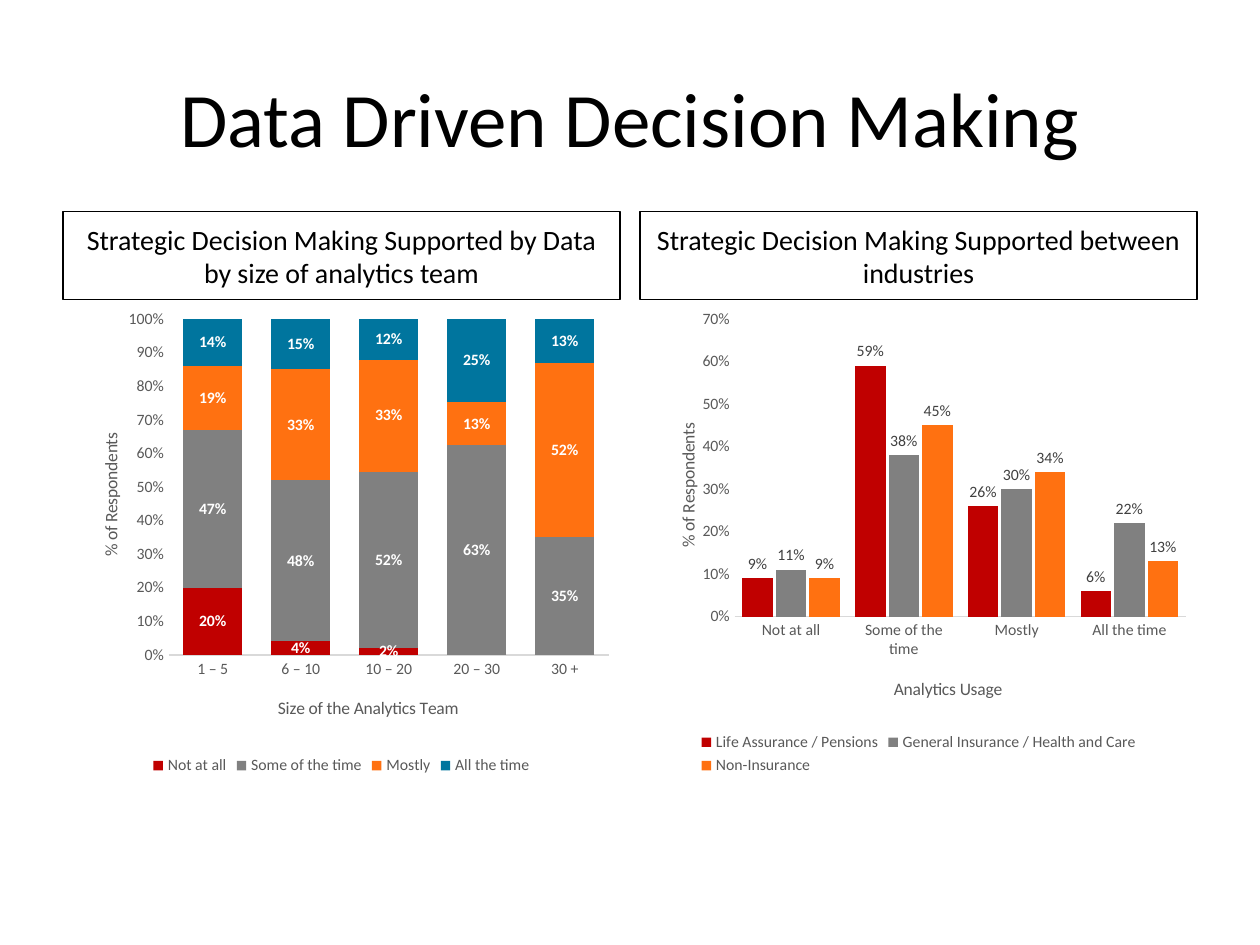
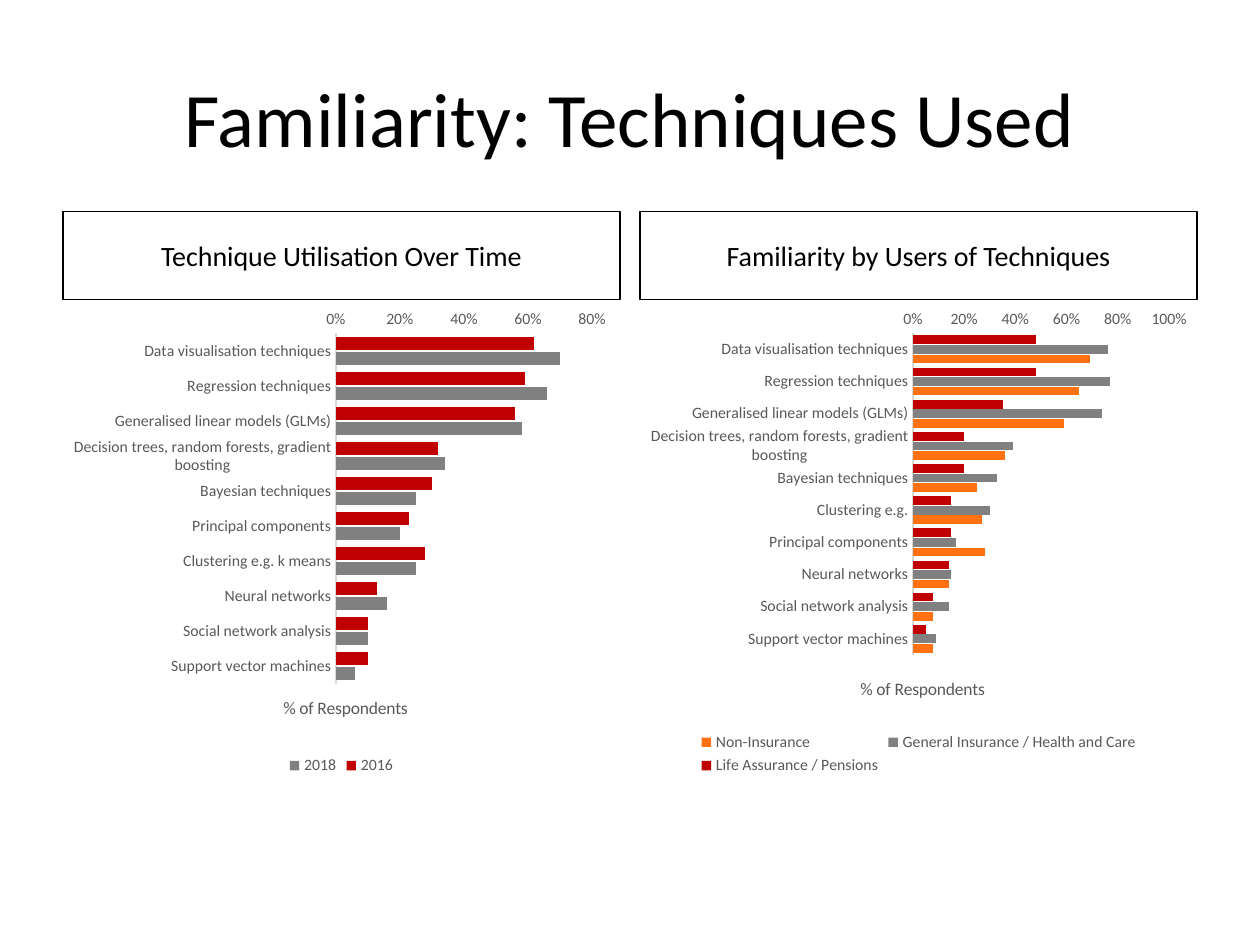
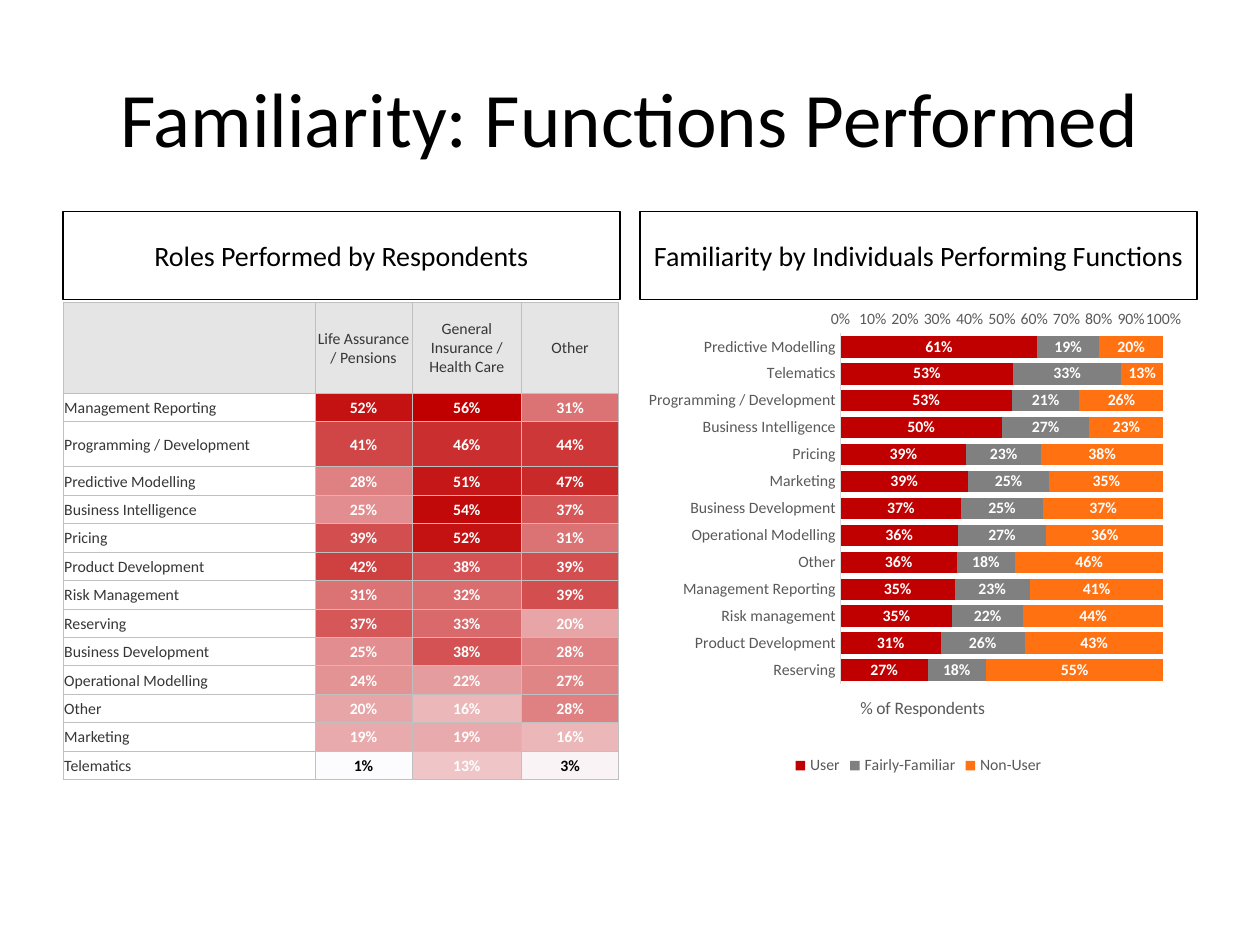
from dataclasses import dataclass

from lxml import etree
from pptx import Presentation
from pptx.chart.data import CategoryChartData
from pptx.dml.color import RGBColor
from pptx.enum.chart import XL_CHART_TYPE, XL_LABEL_POSITION, XL_LEGEND_POSITION, XL_TICK_MARK
from pptx.enum.shapes import MSO_SHAPE
from pptx.enum.text import MSO_ANCHOR, PP_ALIGN
from pptx.oxml.ns import qn
from pptx.util import Inches, Pt

CENTER, LEFT = PP_ALIGN.CENTER, PP_ALIGN.LEFT
MIDDLE = MSO_ANCHOR.MIDDLE
RECTANGLE = MSO_SHAPE.RECTANGLE
NO_TICK = XL_TICK_MARK.NONE
COLUMN_STACKED = XL_CHART_TYPE.COLUMN_STACKED_100
COLUMN_CLUSTERED = XL_CHART_TYPE.COLUMN_CLUSTERED
BAR_STACKED = XL_CHART_TYPE.BAR_STACKED_100
BAR_CLUSTERED = XL_CHART_TYPE.BAR_CLUSTERED
STACKED_TYPES = (COLUMN_STACKED, BAR_STACKED)
BAR_TYPES = (BAR_CLUSTERED, BAR_STACKED)


@dataclass(frozen=True)
class Theme:
    font: str = "Calibri"
    black: str = "000000"
    white: str = "FFFFFF"
    red: str = "C00000"
    gray: str = "808080"
    orange: str = "FF7111"
    blue: str = "00759E"
    chart_text: str = "595959"
    label_text: str = "404040"
    axis_line: str = "D9D9D9"
    table_text: str = "363636"
    table_header: str = "E5E5E5"
    table_border: str = "C0C0C0"
    heat_low: str = "FCFCFF"
    title_size: int = 44
    heading_size: int = 16
    axis_title_size: int = 10
    small_size: int = 9


THEME = Theme()

# Shared geometry, in inches
MARGIN, COLUMN_WIDTH = 0.5, 4.42
COLUMN_LEFTS = (MARGIN, 10 - MARGIN - COLUMN_WIDTH)
TITLE_BOX = (MARGIN, 0.3, 9, 1.25)
HEADING_TOP, HEADING_HEIGHT = 1.68, 0.7
CHART_TOP, CHART_HEIGHT = 2.38, 3.81
TABLE_TOP, TABLE_HEIGHT = 2.4, 3.79
TABLE_COLUMNS = (2, 0.77, 0.87, 0.77)
HEADER_ROW, TALL_ROW = 0.72, 0.36
TALL_ROLE = "Programming / Development"

# Content
RESPONDENTS = "% of Respondents"
LIFE = "Life Assurance / Pensions"
GENERAL = "General Insurance / Health and Care"
NON_INSURANCE = "Non-Insurance"
TECHNIQUES_START = [
    "Data visualisation techniques", "Regression techniques",
    "Generalised linear models (GLMs)",
    "Decision trees, random forests, gradient boosting", "Bayesian techniques",
]
TECHNIQUES_END = ["Neural networks", "Social network analysis", "Support vector machines"]

# "plot" is left, top, width and height, and titles are left and top, as shares of the chart
TEAM_SIZE_CHART = {
    "type": COLUMN_STACKED, "gap": 50, "maximum": 1, "unit": 0.1,
    "plot": (0.19, 0.04, 0.79, 0.7),
    "category_title": ("Size of the Analytics Team", 0.38, 0.82),
    "value_title": (RESPONDENTS, 0.06, 0.27),
    "categories": ["1 – 5", "6 – 10", "10 – 20", "20 – 30", "30 +"],
    "series": [
        ("Not at all", THEME.red, (0.2, 0.04, 0.02, 0, 0)),
        ("Some of the time", THEME.gray, (0.47, 0.48, 0.52, 0.63, 0.35)),
        ("Mostly", THEME.orange, (0.19, 0.33, 0.33, 0.13, 0.52)),
        ("All the time", THEME.blue, (0.14, 0.15, 0.12, 0.25, 0.13)),
    ],
}
INDUSTRY_CHART = {
    "type": COLUMN_CLUSTERED, "gap": 50, "maximum": 0.7, "unit": 0.1,
    "plot": (0.17, 0.04, 0.81, 0.62),
    "category_title": ("Analytics Usage", 0.45, 0.78),
    "value_title": (RESPONDENTS, 0.06, 0.25),
    "categories": ["Not at all", "Some of the time", "Mostly", "All the time"],
    "series": [
        (LIFE, THEME.red, (0.09, 0.59, 0.26, 0.06)),
        (GENERAL, THEME.gray, (0.11, 0.38, 0.3, 0.22)),
        (NON_INSURANCE, THEME.orange, (0.09, 0.45, 0.34, 0.13)),
    ],
}
UTILISATION_CHART = {
    "type": BAR_CLUSTERED, "gap": 50, "maximum": 0.8, "unit": 0.2,
    "plot": (0.49, 0.07, 0.46, 0.73),
    "value_title": (RESPONDENTS, 0.39, 0.82),
    "categories": TECHNIQUES_START
    + ["Principal components", "Clustering e.g. k means"] + TECHNIQUES_END,
    "series": [
        ("2016", THEME.red, (0.62, 0.59, 0.56, 0.32, 0.3, 0.23, 0.28, 0.13, 0.1, 0.1)),
        ("2018", THEME.gray, (0.7, 0.66, 0.58, 0.34, 0.25, 0.2, 0.25, 0.16, 0.1, 0.06)),
    ],
}
TECHNIQUE_USERS_CHART = {
    "type": BAR_CLUSTERED, "gap": 50, "maximum": 1, "unit": 0.2,
    "plot": (0.49, 0.07, 0.46, 0.67),
    "value_title": (RESPONDENTS, 0.39, 0.78),
    "categories": TECHNIQUES_START
    + ["Clustering e.g.", "Principal components"] + TECHNIQUES_END,
    "series": [
        (LIFE, THEME.red, (0.48, 0.48, 0.35, 0.2, 0.2, 0.15, 0.15, 0.14, 0.08, 0.05)),
        (GENERAL, THEME.gray, (0.76, 0.77, 0.74, 0.39, 0.33, 0.3, 0.17, 0.15, 0.14, 0.09)),
        (NON_INSURANCE, THEME.orange,
         (0.69, 0.65, 0.59, 0.36, 0.25, 0.27, 0.28, 0.14, 0.08, 0.08)),
    ],
}
FUNCTIONS_CHART = {
    "type": BAR_STACKED, "gap": 25, "maximum": 1, "unit": 0.1,
    "plot": (0.36, 0.07, 0.58, 0.73),
    "value_title": (RESPONDENTS, 0.39, 0.82),
    "categories": [
        "Predictive Modelling", "Telematics", "Programming / Development",
        "Business Intelligence", "Pricing", "Marketing", "Business Development",
        "Operational Modelling", "Other", "Management Reporting", "Risk management",
        "Product Development", "Reserving",
    ],
    "series": [
        ("User", THEME.red,
         (0.61, 0.53, 0.53, 0.5, 0.39, 0.39, 0.37, 0.36, 0.36, 0.35, 0.35, 0.31, 0.27)),
        ("Fairly-Familiar", THEME.gray,
         (0.19, 0.33, 0.21, 0.27, 0.23, 0.25, 0.25, 0.27, 0.18, 0.23, 0.22, 0.26, 0.18)),
        ("Non-User", THEME.orange,
         (0.2, 0.13, 0.26, 0.23, 0.38, 0.35, 0.37, 0.36, 0.46, 0.41, 0.44, 0.43, 0.55)),
    ],
}
ROLES_TABLE = {
    "header": ["", LIFE, "General Insurance / Health Care", "Other"],
    "rows": [
        ("Management Reporting", 52, 56, 31),
        (TALL_ROLE, 41, 46, 44),
        ("Predictive Modelling", 28, 51, 47),
        ("Business Intelligence", 25, 54, 37),
        ("Pricing", 39, 52, 31),
        ("Product Development", 42, 38, 39),
        ("Risk Management", 31, 32, 39),
        ("Reserving", 37, 33, 20),
        ("Business Development", 25, 38, 28),
        ("Operational Modelling", 24, 22, 27),
        ("Other", 20, 16, 28),
        ("Marketing", 19, 19, 16),
        ("Telematics", 1, 13, 3),
    ],
}
SLIDES = [
    ("Data Driven Decision Making", [
        ("Strategic Decision Making Supported by Data by size of analytics team",
         TEAM_SIZE_CHART),
        ("Strategic Decision Making Supported between industries", INDUSTRY_CHART),
    ]),
    ("Familiarity: Techniques Used", [
        ("Technique Utilisation Over Time", UTILISATION_CHART),
        ("Familiarity by Users of Techniques", TECHNIQUE_USERS_CHART),
    ]),
    ("Familiarity: Functions Performed", [
        ("Roles Performed by Respondents", ROLES_TABLE),
        ("Familiarity by Individuals Performing Functions", FUNCTIONS_CHART),
    ]),
]


# Text helpers
def style_font(font, size, color, bold=False):
    font.name, font.size, font.bold = THEME.font, Pt(size), bold
    font.color.rgb = RGBColor.from_string(color)


def write_text(text_frame, text, size, color, bold=False, alignment=CENTER):
    paragraph = text_frame.paragraphs[0]
    paragraph.alignment = alignment
    run = paragraph.add_run()
    run.text = text
    style_font(run.font, size, color, bold)


def add_title(slide, text):
    text_frame = slide.shapes.add_textbox(*map(Inches, TITLE_BOX)).text_frame
    text_frame.word_wrap = True
    text_frame.vertical_anchor = MIDDLE
    write_text(text_frame, text, THEME.title_size, THEME.black)


def add_heading(slide, left, text):
    box = (left, HEADING_TOP, COLUMN_WIDTH, HEADING_HEIGHT)
    shape = slide.shapes.add_shape(RECTANGLE, *map(Inches, box))
    shape.shadow.inherit = False
    shape.fill.background()
    shape.line.color.rgb = RGBColor.from_string(THEME.black)
    shape.line.width = Pt(0.75)
    shape.text_frame.word_wrap = True
    shape.text_frame.vertical_anchor = MIDDLE
    write_text(shape.text_frame, text, THEME.heading_size, THEME.black)


# Charts
def set_layout(parent, index, shares, inner=False):
    """Fix the place of a chart part; shares are left, top and maybe width, height."""
    for old_layout in parent.findall(qn("c:layout")):
        parent.remove(old_layout)
    layout = etree.Element(qn("c:layout"))
    manual = etree.SubElement(layout, qn("c:manualLayout"))
    settings = [("layoutTarget", "inner")] if inner else []
    settings += [("xMode", "edge"), ("yMode", "edge")]
    settings += zip(("x", "y", "w", "h"), shares)
    for name, value in settings:
        etree.SubElement(manual, qn(f"c:{name}")).set("val", str(value))
    parent.insert(index, layout)


def style_axis(axis, title=None, vertical=False):
    axis.has_major_gridlines = False
    axis.major_tick_mark = axis.minor_tick_mark = NO_TICK
    style_font(axis.tick_labels.font, THEME.small_size, THEME.chart_text)
    if title is None:
        axis.has_title = False
        return
    text, *place = title
    axis_title = axis.axis_title
    write_text(axis_title.text_frame, text, THEME.axis_title_size, THEME.chart_text)
    body = axis_title.element.xpath(".//a:bodyPr")[0]
    body.set("rot", "-5400000" if vertical else "0")
    body.set("vert", "horz")
    set_layout(axis_title.element, 1, place)


def style_labels(series, stacked):
    labels = series.data_labels
    labels.show_value = True
    labels.number_format = "0%"
    labels.number_format_is_linked = False
    labels.position = XL_LABEL_POSITION.CENTER if stacked else XL_LABEL_POSITION.OUTSIDE_END
    color = THEME.white if stacked else THEME.label_text
    style_font(labels.font, THEME.small_size, color, stacked)


def hide_zero_labels(chart, series_index, values):
    labels = chart.element.xpath(".//c:ser")[series_index].find(qn("c:dLbls"))
    zeros = [index for index, value in enumerate(values) if value == 0]
    for place, point_index in enumerate(zeros):
        label = etree.Element(qn("c:dLbl"))
        etree.SubElement(label, qn("c:idx")).set("val", str(point_index))
        etree.SubElement(label, qn("c:delete")).set("val", "1")
        labels.insert(place, label)


def add_chart(slide, left, content):
    data = CategoryChartData(number_format="0%")
    data.categories = content["categories"]
    for name, _, values in content["series"]:
        data.add_series(name, values)
    box = (left, CHART_TOP, COLUMN_WIDTH, CHART_HEIGHT)
    chart = slide.shapes.add_chart(content["type"], *map(Inches, box), data).chart
    stacked, horizontal = content["type"] in STACKED_TYPES, content["type"] in BAR_TYPES
    chart.has_title = False
    style_font(chart.font, 10, THEME.black)

    chart.has_legend = True
    chart.legend.position = XL_LEGEND_POSITION.BOTTOM
    chart.legend.include_in_layout = False
    style_font(chart.legend.font, THEME.small_size, THEME.chart_text)

    category_axis, value_axis = chart.category_axis, chart.value_axis
    style_axis(category_axis, content.get("category_title"))
    category_axis.format.line.color.rgb = RGBColor.from_string(THEME.axis_line)
    category_axis.format.line.width = Pt(0.75)
    category_axis.reverse_order = horizontal
    style_axis(value_axis, content["value_title"], vertical=not horizontal)
    value_axis.format.line.fill.background()
    value_axis.minimum_scale, value_axis.maximum_scale = 0, content["maximum"]
    value_axis.major_unit = content["unit"]
    value_axis.tick_labels.number_format = "0%"
    value_axis.tick_labels.number_format_is_linked = False

    plot = chart.plots[0]
    plot.vary_by_categories = False
    plot.gap_width = content["gap"]
    plot.overlap = 100 if stacked else -10
    for index, (series, (_, color, values)) in enumerate(zip(plot.series, content["series"])):
        series.format.fill.solid()
        series.format.fill.fore_color.rgb = RGBColor.from_string(color)
        if stacked or not horizontal:
            style_labels(series, stacked)
            hide_zero_labels(chart, index, values)
    set_layout(chart.element.xpath(".//c:plotArea")[0], 0, content["plot"], inner=True)


# Heat table
def heat_color(value, lowest, highest):
    share = (value - lowest) / (highest - lowest)
    ends = zip(bytes.fromhex(THEME.heat_low), bytes.fromhex(THEME.red))
    return "".join(f"{round(low + (high - low) * share):02X}" for low, high in ends)


def style_cell(cell, fill):
    cell.margin_left = cell.margin_right = cell.margin_top = Inches(0.01)
    cell.margin_bottom = 0
    cell.vertical_anchor = MIDDLE
    properties = cell._tc.get_or_add_tcPr()
    for side in ("lnL", "lnR", "lnT", "lnB"):
        line = etree.SubElement(properties, qn(f"a:{side}"), w=str(Pt(0.5)))
        solid = etree.SubElement(line, qn("a:solidFill"))
        etree.SubElement(solid, qn("a:srgbClr"), val=THEME.table_border)
    cell.fill.solid()
    cell.fill.fore_color.rgb = RGBColor.from_string(fill)


def add_heat_table(slide, left, content):
    rows = content["rows"]
    box = (left, TABLE_TOP, sum(TABLE_COLUMNS), TABLE_HEIGHT)
    table = slide.shapes.add_table(len(rows) + 1, len(TABLE_COLUMNS), *map(Inches, box)).table
    for column, width in zip(table.columns, TABLE_COLUMNS):
        column.width = Inches(width)
    plain_height = (TABLE_HEIGHT - HEADER_ROW - TALL_ROW) / (len(rows) - 1)
    table.rows[0].height = Inches(HEADER_ROW)

    for index, text in enumerate(content["header"]):
        cell = table.cell(0, index)
        style_cell(cell, THEME.table_header)
        if text:
            write_text(cell.text_frame, text, THEME.small_size, THEME.table_text)

    shares = [value for _, *values in rows for value in values]
    lowest, highest = min(shares), max(shares)
    for row_index, (role, *values) in enumerate(rows, 1):
        height = TALL_ROW if role == TALL_ROLE else plain_height
        table.rows[row_index].height = Inches(height)
        role_cell = table.cell(row_index, 0)
        style_cell(role_cell, THEME.white)
        write_text(role_cell.text_frame, role, THEME.small_size, THEME.table_text,
                   alignment=LEFT)
        for column_index, value in enumerate(values, 1):
            cell = table.cell(row_index, column_index)
            style_cell(cell, heat_color(value, lowest, highest))
            color = THEME.black if value < 10 else THEME.white
            write_text(cell.text_frame, f"{value}%", THEME.small_size, color, bold=True)


def main():
    presentation = Presentation()
    presentation.slide_width, presentation.slide_height = Inches(10), Inches(7.5)
    for title, panels in SLIDES:
        slide = presentation.slides.add_slide(presentation.slide_layouts[6])
        add_title(slide, title)
        for left, (heading, content) in zip(COLUMN_LEFTS, panels):
            add_heading(slide, left, heading)
            add_panel = add_heat_table if "rows" in content else add_chart
            add_panel(slide, left, content)
    presentation.save("out.pptx")


if __name__ == "__main__":
    main()
